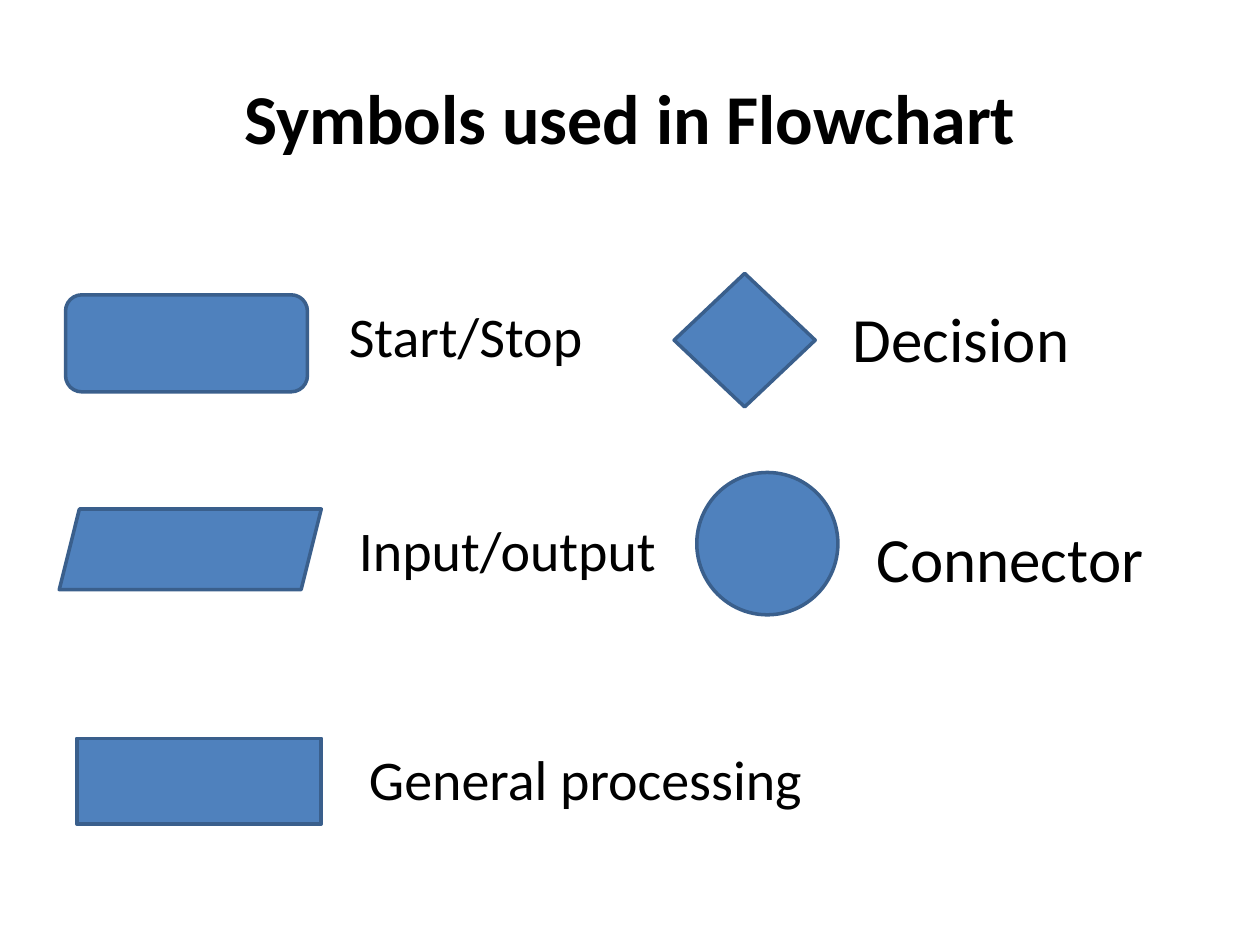
from pptx import Presentation
from pptx.dml.color import RGBColor
from pptx.enum.shapes import MSO_SHAPE
from pptx.enum.text import MSO_ANCHOR, PP_ALIGN
from pptx.util import Inches, Pt

FONT = "Calibri"
BLACK, BLUE, DARK_BLUE = "000000", "4F81BD", "3A5F8C"

# Each symbol: shape, its box, label, label box, label size
SYMBOLS = [
    (MSO_SHAPE.ROUNDED_RECTANGLE, (0.52, 2.34, 1.92, 0.77),
     "Start/Stop", (2.67, 2.34, 3.33, 0.64), 32),
    (MSO_SHAPE.PARALLELOGRAM, (0.47, 4.04, 2.08, 0.64),
     "Input/output", (2.75, 4.04, 3.66, 0.64), 32),
    (MSO_SHAPE.RECTANGLE, (0.61, 5.86, 1.94, 0.68),
     "General processing", (2.83, 5.86, 3.99, 0.64), 32),
    (MSO_SHAPE.FLOWCHART_DECISION, (5.35, 2.17, 1.12, 1.06),
     "Decision", (6.67, 2.33, 2.41, 0.71), 36),
    (MSO_SHAPE.FLOWCHART_CONNECTOR, (5.53, 3.75, 1.12, 1.13),
     "Connector", (6.86, 4.07, 2.48, 0.71), 36),
]


def color(value):
    return RGBColor.from_string(value)


def inches(box):
    return [Inches(v) for v in box]


def add_run(p, text, size, bold=False):
    r = p.add_run()
    r.text = text
    r.font.name = FONT
    r.font.size = Pt(size)
    r.font.bold = bold
    r.font.color.rgb = color(BLACK)


def set_title(s, text, box):
    sp = s.shapes.title
    sp.left, sp.top, sp.width, sp.height = inches(box)
    tf = sp.text_frame
    tf.vertical_anchor = MSO_ANCHOR.MIDDLE
    p = tf.paragraphs[0]
    p.alignment = PP_ALIGN.CENTER
    add_run(p, text, 40, bold=True)


def add_symbol(s, kind, box):
    sp = s.shapes.add_shape(kind, *inches(box))
    sp.shadow.inherit = False
    sp.fill.solid()
    sp.fill.fore_color.rgb = color(BLUE)
    sp.line.color.rgb = color(DARK_BLUE)
    sp.line.width = Pt(2)


def add_label(s, text, box, size):
    tf = s.shapes.add_textbox(*inches(box)).text_frame
    tf.word_wrap = True
    add_run(tf.paragraphs[0], text, size)


def main():
    prs = Presentation()
    prs.slide_width, prs.slide_height = Inches(10), Inches(7.5)
    s = prs.slides.add_slide(prs.slide_layouts[5])  # title only

    set_title(s, "Symbols used in Flowchart", (0.5, 0.3, 9, 1.25))

    # Symbols with their labels
    for kind, box, label, label_box, size in SYMBOLS:
        add_symbol(s, kind, box)
        add_label(s, label, label_box, size)

    prs.save("out.pptx")


if __name__ == "__main__":
    main()
